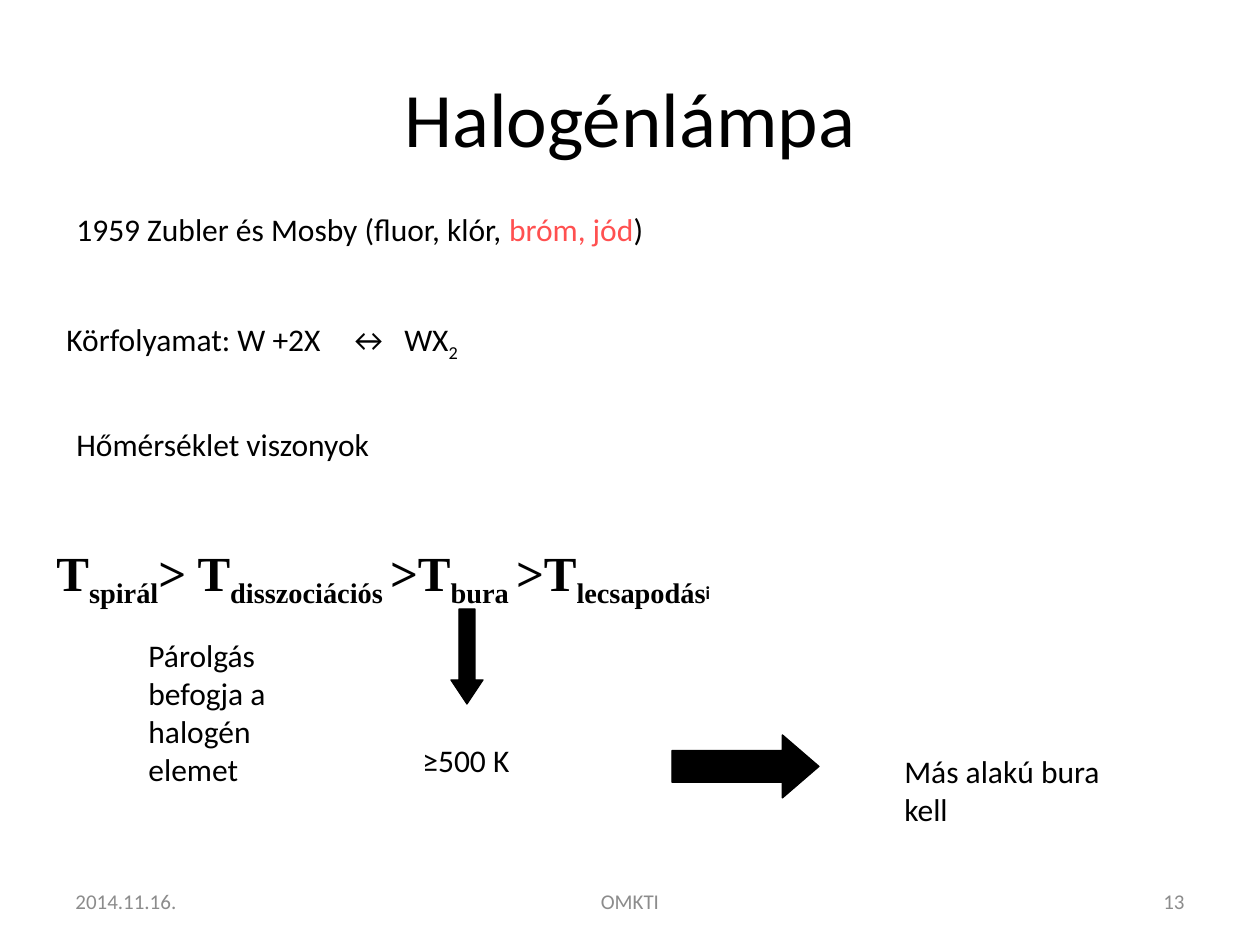
import pptx
import pptx.dml.color
import pptx.enum.shapes
import pptx.enum.text
import pptx.util
from dataclasses import dataclass
from lxml import etree

PX = 914400 // 126
ALIGN = pptx.enum.text.PP_ALIGN
ANCHOR = pptx.enum.text.MSO_ANCHOR
SHAPE = pptx.enum.shapes.MSO_SHAPE


@dataclass(frozen=True)
class Theme:
    ink: str = "000000"
    accent: str = "FF5050"
    muted: str = "8C8C8C"
    body_font: str = "Calibri"
    formula_font: str = "Times New Roman"
    title_size: int = 44
    formula_size: int = 28
    body_size: int = 18
    footer_size: int = 12


THEME = Theme()


def emu(*lengths):
    return [length * PX for length in lengths]


def rgb(code):
    return pptx.dml.color.RGBColor.from_string(code)


def add_text(slide, box, *parts, size=THEME.body_size, font=THEME.body_font,
             color=THEME.ink, bold=False, align=ALIGN.LEFT, anchor=ANCHOR.TOP, tabs=()):
    frame = slide.shapes.add_textbox(*emu(*box)).text_frame
    frame.word_wrap = True
    frame.vertical_anchor = anchor
    paragraph = frame.paragraphs[0]
    paragraph.alignment = align
    if tabs:
        namespace = pptx.oxml.ns.qn
        stops = etree.SubElement(paragraph._p.get_or_add_pPr(), namespace("a:tabLst"))
        for stop in tabs:
            etree.SubElement(stops, namespace("a:tab"), pos=str(stop * PX), algn="l")
    for part in parts:
        words, style = part if isinstance(part, tuple) else (part, {})
        run = paragraph.add_run()
        run.text = words
        run.font.size = pptx.util.Pt(style.get("size", size))
        run.font.name = style.get("font", font)
        run.font.bold = bold
        run.font.color.rgb = rgb(style.get("color", color))
        if style.get("subscript"):
            run._r.get_or_add_rPr().set("baseline", "-25000")


def sub(words, **style):
    return words, {"subscript": True, **style}


def add_arrow(slide, kind, box, head):
    arrow = slide.shapes.add_shape(kind, *emu(*box))
    arrow.adjustments[0] = 0.5
    arrow.adjustments[1] = head
    arrow.shadow.inherit = False
    arrow.fill.solid()
    arrow.fill.fore_color.rgb = rgb(THEME.ink)
    arrow.line.color.rgb = rgb(THEME.ink)
    arrow.line.width = pptx.util.Pt(0.75)


def add_title(slide, box):
    add_text(slide, box, "Halogénlámpa", size=THEME.title_size,
             align=ALIGN.CENTER, anchor=ANCHOR.MIDDLE)


def add_statements(slide, box):
    left, top, width, height = box
    add_text(slide, (left + 10, top, width, height),
             "1959 Zubler és Mosby (fluor, klór, ", ("bróm, jód", {"color": THEME.accent}), ")")
    add_text(slide, (left, top + 110, width, height),
             "Körfolyamat: W +2X\t↔\tWX", sub("2"), tabs=(282, 338))
    add_text(slide, (left + 10, top + 215, width, height), "Hőmérséklet viszonyok")


def add_temperatures(slide, box):
    left, top, width, height = box
    add_text(slide, (left, top, width, height),
             "T", sub("spirál"), "> T", sub("disszociációs "), ">T", sub("bura "),
             ">T", sub("lecsapodás"),
             sub("i", size=THEME.body_size, font=THEME.body_font),
             size=THEME.formula_size, font=THEME.formula_font, bold=True)


def add_consequences(slide, box):
    left, top, width, height = box
    add_text(slide, (left, top + 21, 210, height - 21), "Párolgás befogja a halogén elemet")
    add_arrow(slide, SHAPE.DOWN_ARROW, (left + 315, top, 32, 95), 0.75)
    add_text(slide, (left + 274, top + 126, 168, 63), "≥500 K")
    add_arrow(slide, SHAPE.RIGHT_ARROW, (left + 536, top + 126, 147, 63), 0.58)
    add_text(slide, (left + width - 252, top + 137, 252, 113), "Más alakú bura kell")


def add_footer(slide, box):
    left, top, width, height = box
    date_width, center_width = 294, 400
    cells = (
        ("2014.11.16.", left, date_width, ALIGN.LEFT),
        ("OMKTI", left + (width - center_width) // 2, center_width, ALIGN.CENTER),
        ("13", left + width - date_width, date_width, ALIGN.RIGHT),
    )
    for words, cell_left, cell_width, align in cells:
        add_text(slide, (cell_left, top, cell_width, height), words, size=THEME.footer_size,
                 color=THEME.muted, align=align, anchor=ANCHOR.MIDDLE)


def main():
    deck = pptx.Presentation()
    deck.slide_width, deck.slide_height = emu(1260, 945)
    slide = deck.slides.add_slide(deck.slide_layouts[6])
    add_footer(slide, (63, 876, 1134, 50))
    add_title(slide, (63, 38, 1134, 158))
    add_statements(slide, (54, 204, 804, 63))
    add_temperatures(slide, (44, 536, 989, 72))
    add_consequences(slide, (136, 609, 1008, 235))
    deck.save("out.pptx")


if __name__ == "__main__":
    main()
